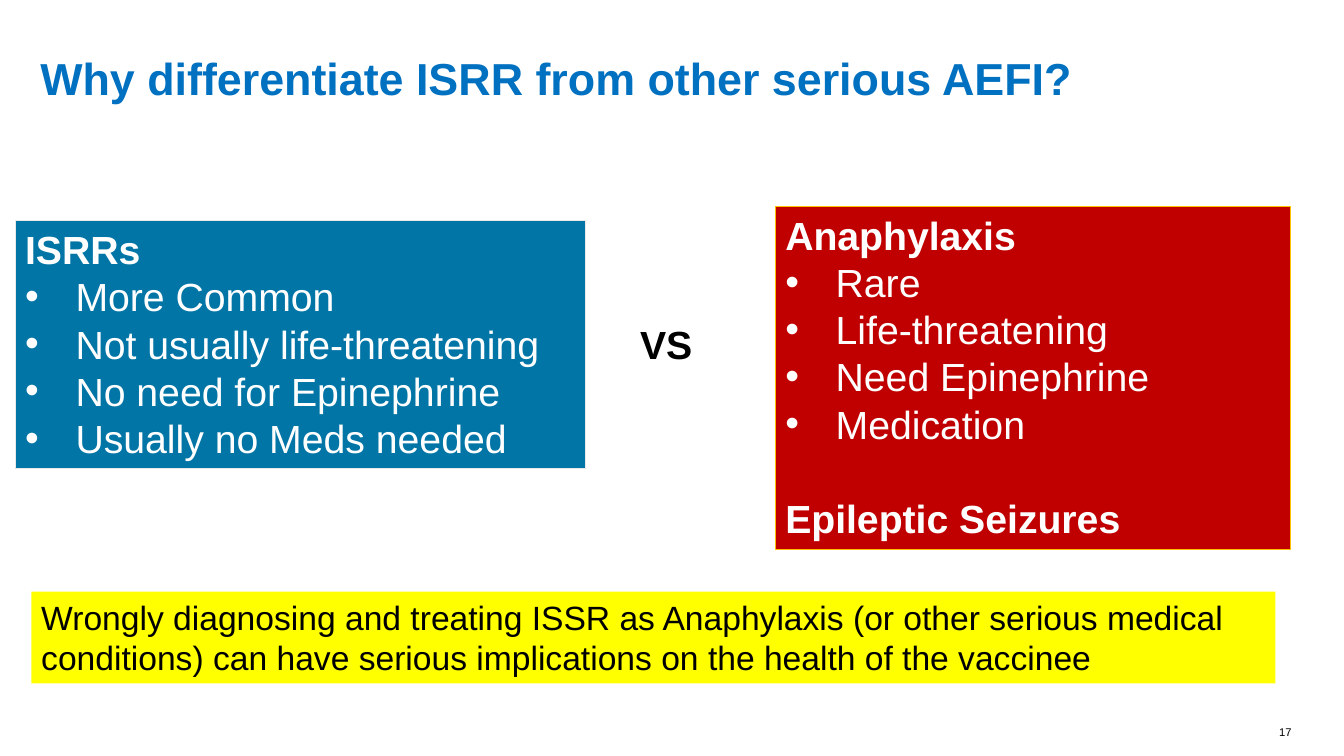
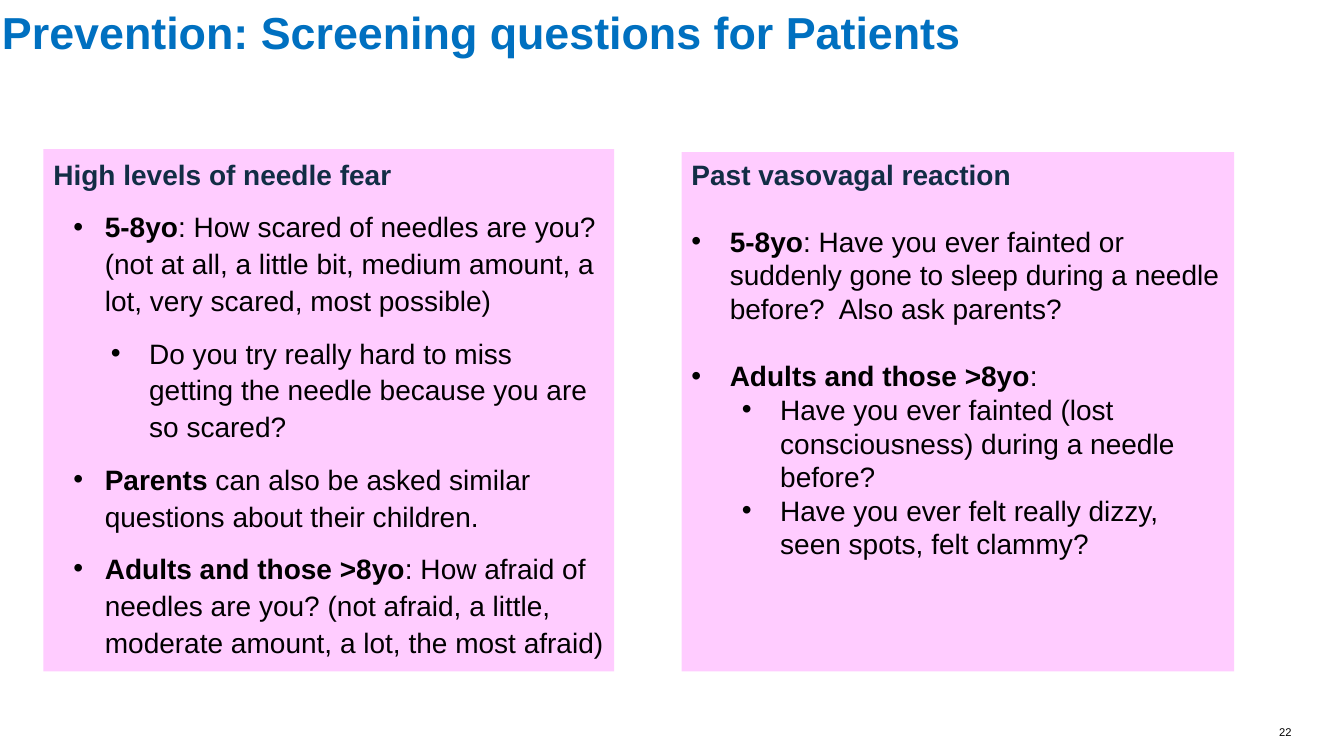
from dataclasses import dataclass

from lxml import etree
from pptx import Presentation
from pptx import util as u
from pptx.dml.color import RGBColor
from pptx.enum import shapes, text
from pptx.oxml import ns


@dataclass(frozen=True)
class Theme:
    font: str = "Arial"
    title: str = "0070C0"
    ink: str = "000000"
    navy: str = "122D45"
    white: str = "FFFFFF"
    red: str = "C00000"
    amber: str = "FFC000"
    teal: str = "0075A6"
    mist: str = "E9E9E9"
    yellow: str = "FFFF00"
    pink: str = "FFCCFF"
    title_size: int = 32
    panel_size: int = 28
    banner_size: int = 24
    question_size: int = 20
    number_size: int = 8


@dataclass(frozen=True)
class Line:
    bold: str = ""
    plain: str = ""
    level: int = 0
    before: float = 0


THEME = Theme()


def add_bullet(paragraph, left, hang):
    props = paragraph._p.get_or_add_pPr()
    props.set("marL", str(left))
    props.set("indent", str(-hang))
    etree.SubElement(props, ns.qn("a:buFont")).set("typeface", THEME.font)
    etree.SubElement(props, ns.qn("a:buChar")).set("char", "•")


def write(frame, lines, size, color=THEME.ink, heading=None, align=None,
          spacing=None, after=None, indents=()):
    for index, line in enumerate(lines):
        paragraph = frame.paragraphs[0] if index == 0 else frame.add_paragraph()
        if line.level:
            add_bullet(paragraph, *indents[line.level - 1])
            paragraph.level = line.level - 1
        paragraph.alignment = align or text.PP_ALIGN.LEFT
        paragraph.line_spacing = spacing
        if line.before:
            paragraph.space_before = u.Pt(line.before)
        if after is not None:
            paragraph.space_after = u.Pt(after)
        tone = color if line.level else heading or color
        for words, bold in ((line.bold, True), (line.plain, False)):
            if words:
                run = paragraph.add_run()
                run.text = words
                run.font.name = THEME.font
                run.font.size = u.Pt(size)
                run.font.bold = bold
                run.font.color.rgb = RGBColor.from_string(tone)


class Deck:
    def __init__(self):
        self.show = Presentation()
        self.show.slide_width = u.Inches(13.33)
        self.show.slide_height = u.Inches(7.5)
        self.slide = None

    def across(self, percent):
        return int(self.show.slide_width * percent / 100)

    def down(self, percent):
        return int(self.show.slide_height * percent / 100)

    def area(self, left, top, width, height):
        return (self.across(left), self.down(top),
                self.across(width), self.down(height))

    def start(self, title, place, number, anchor=text.MSO_ANCHOR.TOP):
        self.slide = self.show.slides.add_slide(self.show.slide_layouts[6])
        self.label([Line(title)], place, THEME.title_size, anchor=anchor,
                   margins=(0.15, 2.93), color=THEME.title, spacing=0.9)
        self.label([Line(plain=str(number))], (93.7, 96, 2.4, 2.67),
                   THEME.number_size, margins=(0, 0),
                   align=text.PP_ALIGN.RIGHT)

    def label(self, lines, place, size, margins=None, wrap=True,
              anchor=text.MSO_ANCHOR.TOP, **style):
        frame = self.slide.shapes.add_textbox(*self.area(*place)).text_frame
        frame.word_wrap = wrap
        frame.vertical_anchor = anchor
        if margins:
            frame.margin_left, frame.margin_right = map(self.across, margins)
            frame.margin_top = frame.margin_bottom = 0
        write(frame, lines, size, **style)

    def panel(self, lines, place, size, fill, edge=None, indents=(), **style):
        box = self.slide.shapes.add_shape(
            shapes.MSO_SHAPE.RECTANGLE, *self.area(*place))
        box.shadow.inherit = False
        box.fill.solid()
        box.fill.fore_color.rgb = RGBColor.from_string(fill)
        if edge:
            box.line.color.rgb = RGBColor.from_string(edge)
            box.line.width = u.Pt(0.75)
        else:
            box.line.fill.background()
        box.text_frame.word_wrap = True
        box.text_frame.vertical_anchor = text.MSO_ANCHOR.TOP
        steps = [tuple(map(self.across, pair)) for pair in indents]
        write(box.text_frame, lines, size, indents=steps, **style)


def comparison(deck):
    deck.start("Why differentiate ISRR from other serious AEFI?",
               (2.85, 0, 86.27, 13.87), 17, text.MSO_ANCHOR.BOTTOM)
    contrast = dict(size=THEME.panel_size, color=THEME.white,
                    indents=[(3.75, 3.75)])
    anaphylaxis = [Line("Anaphylaxis")]
    anaphylaxis += [Line(plain=trait, level=1) for trait in (
        "Rare", "Life-threatening", "Need Epinephrine", "Medication")]
    anaphylaxis.append(Line("Epileptic Seizures", before=34))
    deck.panel(anaphylaxis, (57.69, 27.33, 38.33, 45.33),
               fill=THEME.red, edge=THEME.amber, **contrast)
    isrrs = [Line("ISRRs")]
    isrrs += [Line(plain=trait, level=1) for trait in (
        "More Common", "Not usually life-threatening",
        "No need for Epinephrine", "Usually no Meds needed")]
    deck.panel(isrrs, (1.13, 29.2, 42.46, 32.8),
               fill=THEME.teal, edge=THEME.mist, **contrast)
    deck.panel([Line(plain="Wrongly diagnosing and treating ISSR as Anaphylaxis "
                     "(or other serious medical conditions) can have serious "
                     "implications on the health of the vaccinee")],
               (2.33, 78.27, 92.57, 12.13), THEME.banner_size, THEME.yellow)
    deck.label([Line("VS")], (46.89, 41.73, 5.4, 7.6), THEME.panel_size,
               wrap=False)


def screening(deck):
    deck.start("Prevention: Screening questions for Patients",
               (0, 1.47, 100, 11.2), 22)
    questions = dict(size=THEME.question_size, fill=THEME.pink,
                     heading=THEME.navy)
    needle_fear = [
        Line("High levels of needle fear"),
        Line("5-8yo", ": How scared of needles are you? (not at all, a little "
             "bit, medium amount, a lot, very scared, most possible)", 1, 5),
        Line("", "Do you try really hard to miss getting the needle because "
             "you are so scared?", 2, 5),
        Line("Parents", " can also be asked similar questions about their "
             "children.", 1, 5),
        Line("Adults and those >8yo", ": How afraid of needles are you? (not "
             "afraid, a little, moderate amount, a lot, the most afraid)", 1, 5),
    ]
    deck.panel(needle_fear, (3.23, 19.73, 42.46, 69.07), spacing=1.1, after=6,
               indents=[(3.83, 2.33), (7.13, 2.85)], **questions)
    vasovagal = [
        Line("Past vasovagal reaction"),
        Line("5-8yo", ": Have you ever fainted or suddenly gone to sleep during "
             "a needle before?  Also ask parents?", 1, 24),
        Line("Adults and those >8yo", ":", 1, 24),
        Line("", "Have you ever fainted (lost consciousness) during a needle "
             "before?", 2),
        Line("", "Have you ever felt really dizzy, seen spots, felt clammy?", 2),
    ]
    deck.panel(vasovagal, (50.71, 20.13, 41.11, 68.67),
               indents=[(2.85, 2.85), (6.6, 2.85)], **questions)


def main():
    deck = Deck()
    comparison(deck)
    screening(deck)
    deck.show.save("out.pptx")


if __name__ == "__main__":
    main()
